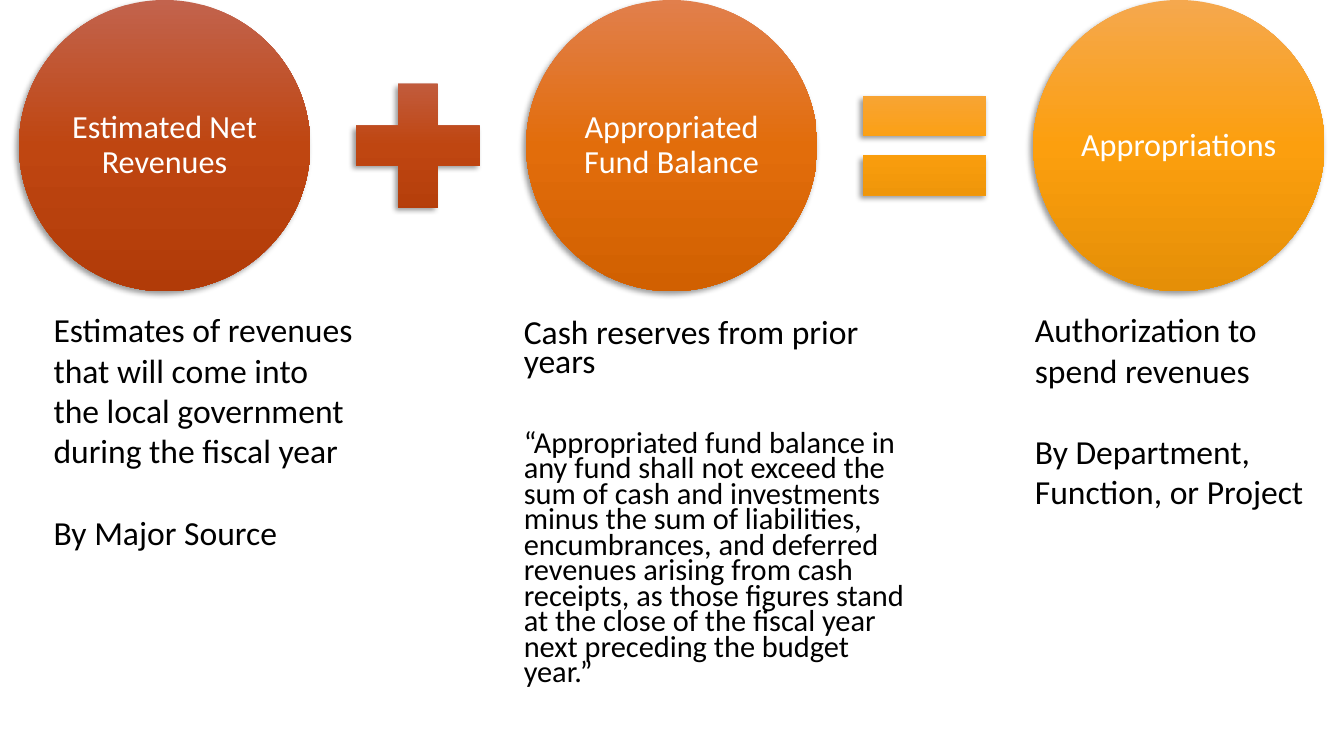
"""Build a slide showing the budget sum: revenues plus fund balance equals spending."""
import copy
import dataclasses

import pptx
import pptx.dml.color
import pptx.enum.shapes
import pptx.enum.text
import pptx.oxml
import pptx.oxml.ns
import pptx.shapes.autoshape
import pptx.slide
import pptx.text.text
import pptx.util

Cm = pptx.util.Cm
Pt = pptx.util.Pt
FORM = pptx.enum.shapes.MSO_SHAPE
FONT = "Calibri"
COLORS = {
    "rust top": "C2634D", "rust mid": "BF4611", "rust low": "B13B08",
    "orange top": "E17F4C", "orange mid": "E26D0B", "orange low": "D16001",
    "gold top": "F5A84E", "gold mid": "FC9F0E", "gold low": "E58F07",
    "black": "000000", "white": "FFFFFF",
}
STEP = 12.78


@dataclasses.dataclass(frozen=True)
class Term:
    label: str
    hue: str


@dataclasses.dataclass(frozen=True)
class Sign:
    form: pptx.enum.shapes.MSO_SHAPE
    hue: str


@dataclasses.dataclass(frozen=True)
class Para:
    text: str
    size: float = 24
    before: float = 0


@dataclasses.dataclass(frozen=True)
class Note:
    left: float
    top: float
    width: float
    height: float
    paras: tuple[Para, ...]
    pitch: float = 1.0


TERMS = (
    Term("Estimated Net Revenues", "rust"),
    Term("Appropriated Fund Balance", "orange"),
    Term("Appropriations", "gold"),
)
SIGNS = (Sign(FORM.MATH_PLUS, "rust"), Sign(FORM.MATH_EQUAL, "gold"))
NOTES = (
    Note(1.1, 7.67, 8.18, 6.4, (
        Para("Estimates of revenues that will come into the local government "
             "during the fiscal year"),
        Para("By Major Source", before=29.3),
    )),
    Note(12.95, 8, 10.16, 9.83, (
        Para("Cash reserves from prior years", before=10),
        Para("“Appropriated fund balance in any fund shall not exceed the sum of "
             "cash and investments minus the sum of liabilities, encumbrances, and "
             "deferred revenues arising from cash receipts, as those figures stand "
             "at the close of the fiscal year next preceding the budget year.”",
             21.7, 38.5),
    ), 0.7),
    Note(25.83, 7.67, 8.03, 5.38, (
        Para("Authorization to spend revenues"),
        Para("By Department, Function, or Project", before=29.3),
    )),
)


def paint(hue: str) -> pptx.dml.color.RGBColor:
    return pptx.dml.color.RGBColor.from_string(COLORS[hue])


def add_run(para: pptx.text.text._Paragraph, text: str, size: float, hue: str) -> None:
    run = para.add_run()
    run.text = text
    run.font.name = FONT
    run.font.size = Pt(size)
    run.font.color.rgb = paint(hue)


def add_form(slide: pptx.slide.Slide, form: pptx.enum.shapes.MSO_SHAPE, left: float,
             top: float, size: float, hue: str) -> pptx.shapes.autoshape.Shape:
    shape = slide.shapes.add_shape(form, Cm(left), Cm(top), Cm(size), Cm(size))
    shape.line.fill.background()
    shape.fill.gradient()
    shape.fill.gradient_angle = 270
    props = shape._element.spPr
    stops = props.find(".//" + pptx.oxml.ns.qn("a:gsLst"))
    stops.append(copy.deepcopy(stops[0]))
    for spot, (stop, part) in enumerate(
            zip(shape.fill.gradient_stops, ("top", "mid", "low"))):
        stop.position = spot / 2
        stop.color.rgb = paint(f"{hue} {part}")
    shape.shadow.inherit = False
    props.find(pptx.oxml.ns.qn("a:effectLst")).append(pptx.oxml.parse_xml(
        f'<a:outerShdw {pptx.oxml.ns.nsdecls("a")} blurRad="{Pt(4)}" dist="{Pt(3)}" '
        f'dir="8100000" rotWithShape="0"><a:srgbClr val="{COLORS["black"]}">'
        '<a:alpha val="40000"/></a:srgbClr></a:outerShdw>'))
    return shape


def add_term(slide: pptx.slide.Slide, term: Term, left: float) -> None:
    frame = add_form(slide, FORM.OVAL, left, 0, 7.34, term.hue).text_frame
    frame.word_wrap = True
    frame.vertical_anchor = pptx.enum.text.MSO_ANCHOR.MIDDLE
    frame.margin_left = frame.margin_right = Cm(0.08)
    frame.margin_top = frame.margin_bottom = Cm(0.08)
    para = frame.paragraphs[0]
    para.alignment = pptx.enum.text.PP_ALIGN.CENTER
    para.line_spacing = 0.9
    add_run(para, term.label, 23, "white")


def add_note(slide: pptx.slide.Slide, note: Note) -> None:
    frame = slide.shapes.add_textbox(
        Cm(note.left), Cm(note.top), Cm(note.width), Cm(note.height)).text_frame
    frame.word_wrap = True
    for rank, item in enumerate(note.paras):
        para = frame.add_paragraph() if rank else frame.paragraphs[0]
        para.line_spacing = note.pitch
        para.space_before = Pt(item.before)
        add_run(para, item.text, item.size, "black")


def main() -> None:
    deck = pptx.Presentation()
    deck.slide_width, deck.slide_height = Cm(33.87), Cm(19.05)
    slide = deck.slides.add_slide(deck.slide_layouts[6])
    for rank, term in enumerate(TERMS):
        add_term(slide, term, 0.48 + rank * STEP)
    for rank, sign in enumerate(SIGNS):
        add_form(slide, sign.form, 8.41 + rank * STEP, 1.55, 4.24, sign.hue)
    for note in NOTES:
        add_note(slide, note)
    deck.save("out.pptx")


if __name__ == "__main__":
    main()
